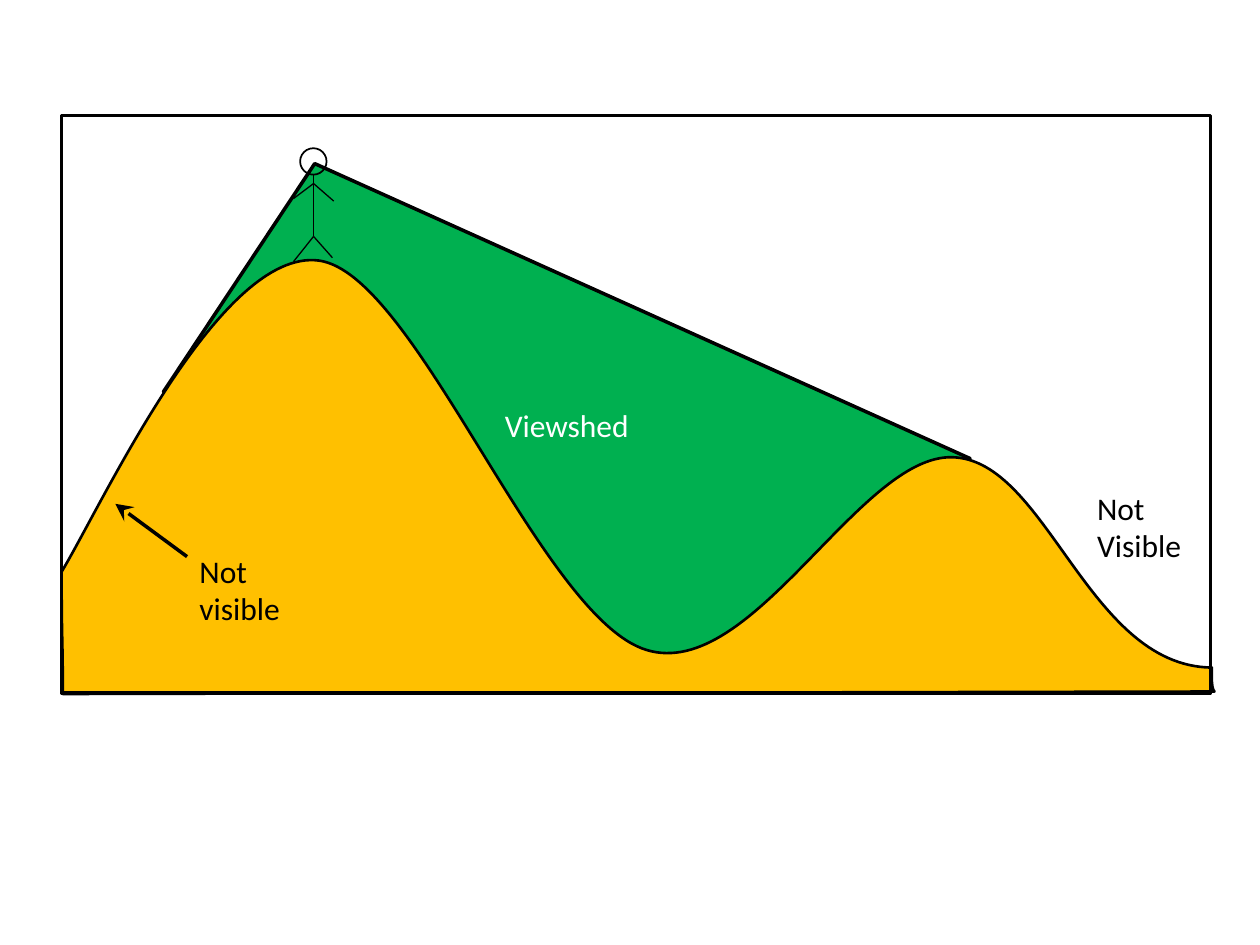
from lxml import etree
from pptx import Presentation
from pptx.dml.color import RGBColor
from pptx.enum import shapes as s, text as t
from pptx.oxml.ns import qn
from pptx.util import Pt

HUE = {"view": "00B050", "hill": "FFC000", "ink": "000000", "pale": "FFFFFF"}

# Outlines: a start point, then a point for a line or three for a Bézier curve.
VIEW = [
    (144.7, 27.4), [(519.1, 195.9)], [(391.7, 321.2)],
    [(371.5, 317.6), (346.3, 326.2), (326.9, 326.2)],
    [(189.3, 270.8)],
    [(189.3, 234.8), (58.3, 157.7), (58.3, 157.7)],
    [(144.7, 27.4)],
]
HILLS = [
    (657.3, 315.4),
    [(657.3, 315.4), (656.6, 327.6), (658.8, 329.1)],
    [(0.7, 330.5)],
    [(0.7, 296.7), (0, 301.7), (0, 260.7)],
    [(24.5, 219.6), (90.7, 75.6), (146.9, 82.8)],
    [(202.3, 90), (273.6, 286.6), (334.1, 305.3)],
    [(394.5, 324), (455.7, 193.7), (509, 195.2)],
    [(563, 196.6), (586.1, 314), (656.6, 315.4)],
    [(657.3, 315.4)],
]


def tint(hue):
    return RGBColor.from_string(HUE[hue])


def style(shape, width, fill=None):
    shape.shadow.inherit = False
    if fill:
        shape.fill.solid()
        shape.fill.fore_color.rgb = tint(fill)
    else:
        shape.fill.background()
    shape.line.color.rgb = tint("ink")
    shape.line.width = Pt(width)


def write(frame, lines, hue, align):
    frame.text = "\n".join(lines)
    for para in frame.paragraphs:
        para.alignment = align
        para.font.name = "Calibri"
        para.font.size = Pt(18)
        para.font.color.rgb = tint(hue)


def area(slide, left, top, plan, width, fill):
    """Filled outline whose three-point parts become Bézier curves."""
    start, *parts = plan

    def spot(dot):
        return Pt(left + dot[0]), Pt(top + dot[1])

    pen = slide.shapes.build_freeform(*spot(start), scale=1.0)
    pen.add_line_segments([spot(part[-1]) for part in parts], close=True)
    shape = pen.convert_to_shape()
    legs = list(shape._element.iter(qn("a:lnTo")))
    for leg, part in zip(legs, parts):
        if len(part) == 3:
            leg.tag = qn("a:cubicBezTo")
            for place, dot in enumerate(part[:2]):
                x, y = spot(dot)
                knot = etree.Element(qn("a:pt"), x=str(x - shape.left),
                                     y=str(y - shape.top))
                leg.insert(place, knot)
    style(shape, width, fill)
    return shape


def stroke(parent, left, top, start, end, width):
    line = parent.shapes.add_connector(
        s.MSO_CONNECTOR.STRAIGHT, Pt(left + start[0]), Pt(top + start[1]),
        Pt(left + end[0]), Pt(top + end[1]))
    line.line.color.rgb = tint("ink")
    line.line.width = Pt(width)
    etree.SubElement(line._element.spPr, qn("a:effectLst"))
    return line


def viewer(slide, left, top):
    """Stick figure standing on the first hill."""
    group = slide.shapes.add_group_shape()
    head = group.shapes.add_shape(
        s.MSO_SHAPE.OVAL, Pt(left + 3.8), Pt(top), Pt(15.1), Pt(15.1))
    style(head, 1)
    neck, arms, hip = (11.5, 15.1), (11.5, 20.2), (11.5, 50.4)
    for start, end in [(neck, hip), (hip, (22.3, 62.6)), (arms, (23, 30.2)),
                       (arms, (0, 28.8)), (hip, (0, 64.8))]:
        stroke(group, left, top, start, end, 0.75)


def label(slide, left, top, width, lines):
    box = slide.shapes.add_textbox(Pt(left), Pt(top), Pt(width), Pt(51))
    frame = box.text_frame
    write(frame, lines, "ink", t.PP_ALIGN.LEFT)
    frame.word_wrap = False
    frame.auto_size = t.MSO_AUTO_SIZE.SHAPE_TO_FIT_TEXT


def scene(slide, left, top, width, height):
    view = area(slide, left, top, VIEW, 2, "view")
    view.text_frame.vertical_anchor = t.MSO_ANCHOR.MIDDLE
    write(view.text_frame, ["Viewshed"], "pale", t.PP_ALIGN.CENTER)
    area(slide, left, top, HILLS, 1.5, "hill")
    viewer(slide, left + 132.5, top + 18.6)
    border = slide.shapes.add_shape(
        s.MSO_SHAPE.RECTANGLE, Pt(left), Pt(top), Pt(width), Pt(height))
    style(border, 2)
    label(slide, left + 584.6, top + 209.6, 63.4, ["Not", "Visible"])
    label(slide, left + 71.7, top + 245.6, 61.2, ["Not", "visible"])
    arrow = stroke(slide, left, top, (71.7, 252), (30.7, 221.8), 2)
    etree.SubElement(arrow.line._get_or_add_ln(), qn("a:tailEnd"),
                     type="stealth", w="lg", len="lg")


def main():
    deck = Presentation()
    deck.slide_width, deck.slide_height = Pt(720), Pt(540)
    slide = deck.slides.add_slide(deck.slide_layouts[6])
    scene(slide, 35.2, 66.1, 656.6, 329.8)
    deck.save("out.pptx")


if __name__ == "__main__":
    main()
